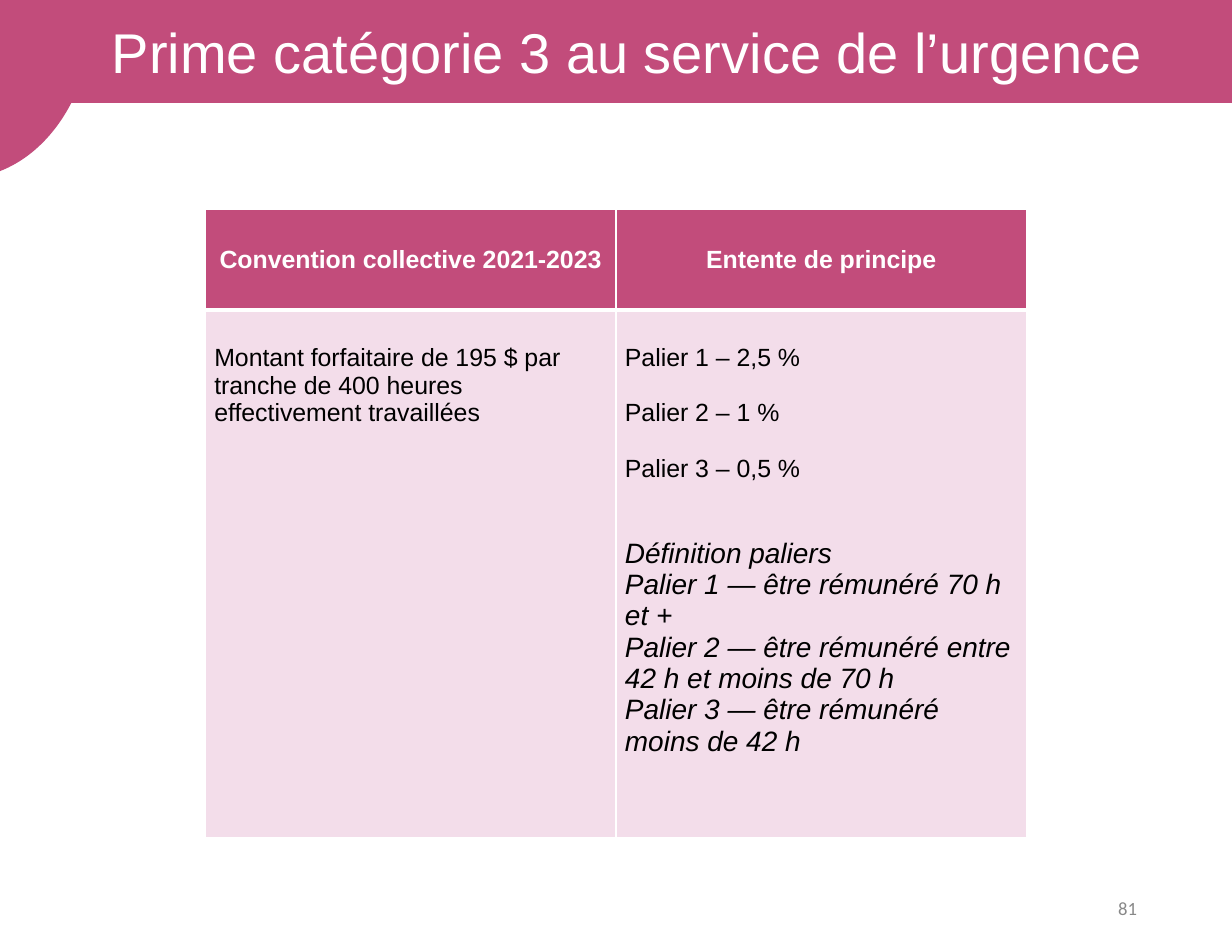
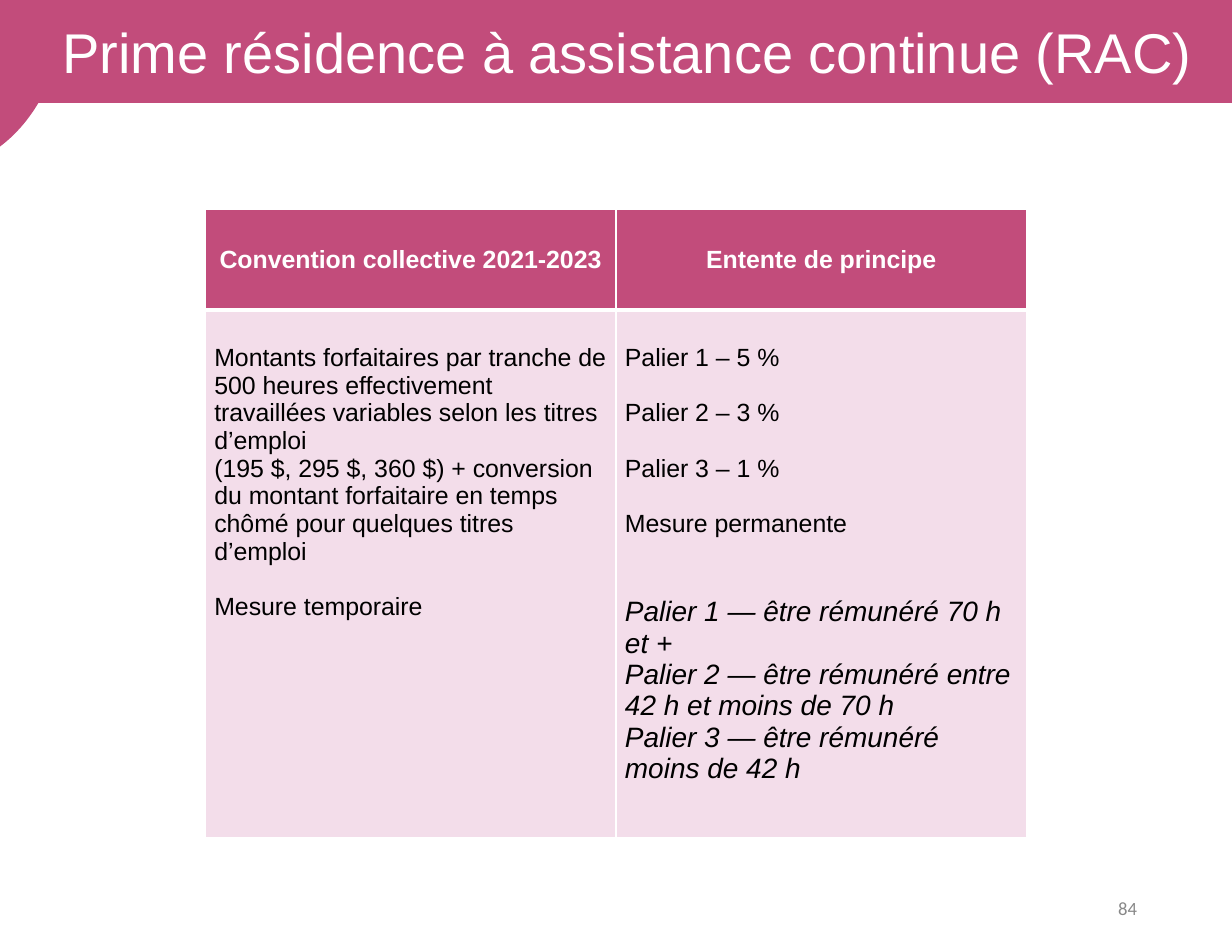
"""Builds two bonus slides that compare the collective agreement with the new settlement."""
from dataclasses import dataclass

from lxml.etree import SubElement
from pptx import Presentation
from pptx.dml.color import RGBColor
from pptx.enum.shapes import MSO_SHAPE
from pptx.enum.text import MSO_ANCHOR, MSO_AUTO_SIZE, PP_ALIGN
from pptx.oxml.ns import qn
from pptx.util import Inches, Pt


@dataclass(frozen=True)
class Theme:
    """Colours, fonts and type sizes shared by the slides."""
    rose: str = "C24C7B"
    pale: str = "F3DDEA"
    white: str = "FFFFFF"
    black: str = "000000"
    grey: str = "888888"
    font: str = "Arial"
    number_font: str = "Calibri"
    title: int = 36
    body: int = 16
    note: int = 18
    number: int = 12
    line: float = 1.11


@dataclass(frozen=True)
class Line:
    """A cell paragraph with the height of the gap above it, in points of type."""
    text: str
    gap: int = 0
    note: bool = False


class Deck:
    """Holds the theme and the current slide; lengths are percentages of the slide."""

    def __init__(self, theme):
        self.theme = theme
        self.prs = Presentation()
        self.prs.slide_width, self.prs.slide_height = Inches(11), Inches(8.5)
        self.s = None

    def box(self, x, y, w, h):
        """Turn percentages into slide lengths."""
        width, height = self.prs.slide_width, self.prs.slide_height
        return [int(v * full / 100) for v, full in zip((x, y, w, h), (width, height) * 2)]

    def paint(self, sp):
        """Give a shape the rose fill and outline."""
        sp.fill.solid()
        sp.fill.fore_color.rgb = RGBColor.from_string(self.theme.rose)
        sp.line.color.rgb = RGBColor.from_string(self.theme.rose)
        sp.line.width = Pt(2)

    def style(self, p, size, color, align=PP_ALIGN.LEFT, font=None, bold=False, italic=False):
        """Format a whole paragraph."""
        p.alignment = align
        p.font.name = font or self.theme.font
        p.font.size = Pt(size)
        p.font.bold, p.font.italic = bold, italic
        p.font.color.rgb = RGBColor.from_string(color)

    def title(self, text):
        """Start a slide whose title fills the top band."""
        self.s = self.prs.slides.add_slide(self.prs.slide_layouts[5])
        sp = self.s.shapes.title
        sp.left, sp.top, sp.width, sp.height = self.box(0, 0, 101.8, 10.7)
        self.paint(sp)
        tf = sp.text_frame
        tf.text = text
        tf.auto_size = MSO_AUTO_SIZE.NONE
        tf.vertical_anchor = MSO_ANCHOR.MIDDLE
        self.style(tf.paragraphs[0], self.theme.title, self.theme.white, PP_ALIGN.CENTER)

    def corner(self, x, y):
        """Add the round corner under the band."""
        sp = self.s.shapes.add_shape(MSO_SHAPE.OVAL, *self.box(x, y, 21.09, 35.29))
        sp.shadow.inherit = False
        self.paint(sp)

    def number(self, value):
        """Add the page number."""
        tf = self.s.shapes.add_textbox(*self.box(70.64, 92.71, 22.55, 5.29)).text_frame
        tf.word_wrap = True
        tf.vertical_anchor = MSO_ANCHOR.MIDDLE
        tf.text = str(value)
        self.style(tf.paragraphs[0], self.theme.number, self.theme.grey,
                   PP_ALIGN.RIGHT, self.theme.number_font)

    def cell(self, cell, fill, top, bottom):
        """Set a cell's fill, margins and white borders."""
        cell.fill.solid()
        cell.fill.fore_color.rgb = RGBColor.from_string(fill)
        cell.margin_left = cell.margin_right = Inches(0.08)
        cell.margin_top = cell.margin_bottom = Inches(0.06)
        tcPr = cell._tc.get_or_add_tcPr()
        edges = {"a:lnL": 1, "a:lnR": 1, "a:lnT": top, "a:lnB": bottom}
        for i, (tag, width) in enumerate(edges.items()):
            ln = SubElement(tcPr, qn(tag), w=str(Pt(width)))
            SubElement(SubElement(ln, qn("a:solidFill")), qn("a:srgbClr"), val=self.theme.white)
            tcPr.insert(i, ln)

    def table(self, heads, columns):
        """Add the comparison table, one list of lines per column."""
        t = self.theme
        x, y, w, h = self.box(100 / 6, 22, 200 / 3, 66)
        tbl = self.s.shapes.add_table(2, len(heads), x, y, w, h).table
        tbl.first_row = tbl.horz_banding = False
        tbl.rows[0].height = int(h * 0.16)
        tbl.rows[1].height = h - tbl.rows[0].height
        for c, (head, lines) in enumerate(zip(heads, columns)):
            top, body = tbl.cell(0, c), tbl.cell(1, c)
            self.cell(top, t.rose, 1, 3)
            top.vertical_anchor = MSO_ANCHOR.MIDDLE
            top.text = head
            self.style(top.text_frame.paragraphs[0], t.body, t.white, PP_ALIGN.CENTER, bold=True)
            self.cell(body, t.pale, 3, 1)
            body.margin_top += Pt(t.body * t.line)
            body.text = "\n".join(line.text for line in lines)
            for p, line in zip(body.text_frame.paragraphs, lines):
                self.style(p, t.note if line.note else t.body, t.black, italic=line.note)
                p.space_before = Pt(line.gap * t.line)


THEME = Theme()
HEADS = ["Convention collective 2021-2023", "Entente de principe"]
TIERS = [
    "Palier 1 — être rémunéré 70 h et +",
    "Palier 2 — être rémunéré entre 42 h et moins de 70 h",
    "Palier 3 — être rémunéré moins de 42 h",
]


def rates(*values):
    """List the rate of each tier, a blank line's height apart."""
    return [Line(f"Palier {i} – {v} %", THEME.body if i > 1 else 0)
            for i, v in enumerate(values, 1)]


def notes(texts, gap):
    """List the tier definitions below a gap."""
    return [Line(text, 0 if i else gap, True) for i, text in enumerate(texts)]


def main():
    """Build and save the slides."""
    deck = Deck(THEME)

    deck.title("Prime catégorie 3 au service de l’urgence")
    deck.corner(-13.64, -16.71)
    deck.number(81)
    deck.table(HEADS, [
        [Line("Montant forfaitaire de 195 $ par tranche de 400 heures effectivement travaillées")],
        rates("2,5", "1", "0,5") + notes(["Définition paliers"] + TIERS, 2 * THEME.body),
    ])

    deck.title("Prime résidence à assistance continue (RAC)")
    deck.corner(-15.91, -17.65)
    deck.number(84)
    deck.table(HEADS, [
        [Line("Montants forfaitaires par tranche de 500 heures effectivement travaillées "
              "variables selon les titres d’emploi"),
         Line("(195 $, 295 $, 360 $) + conversion du montant forfaitaire en temps chômé "
              "pour quelques titres d’emploi"),
         Line("Mesure temporaire", THEME.body)],
        rates("5", "3", "1") + [Line("Mesure permanente", THEME.body)]
        + notes(TIERS, THEME.body + THEME.note),
    ])

    deck.prs.save("out.pptx")


if __name__ == "__main__":
    main()
